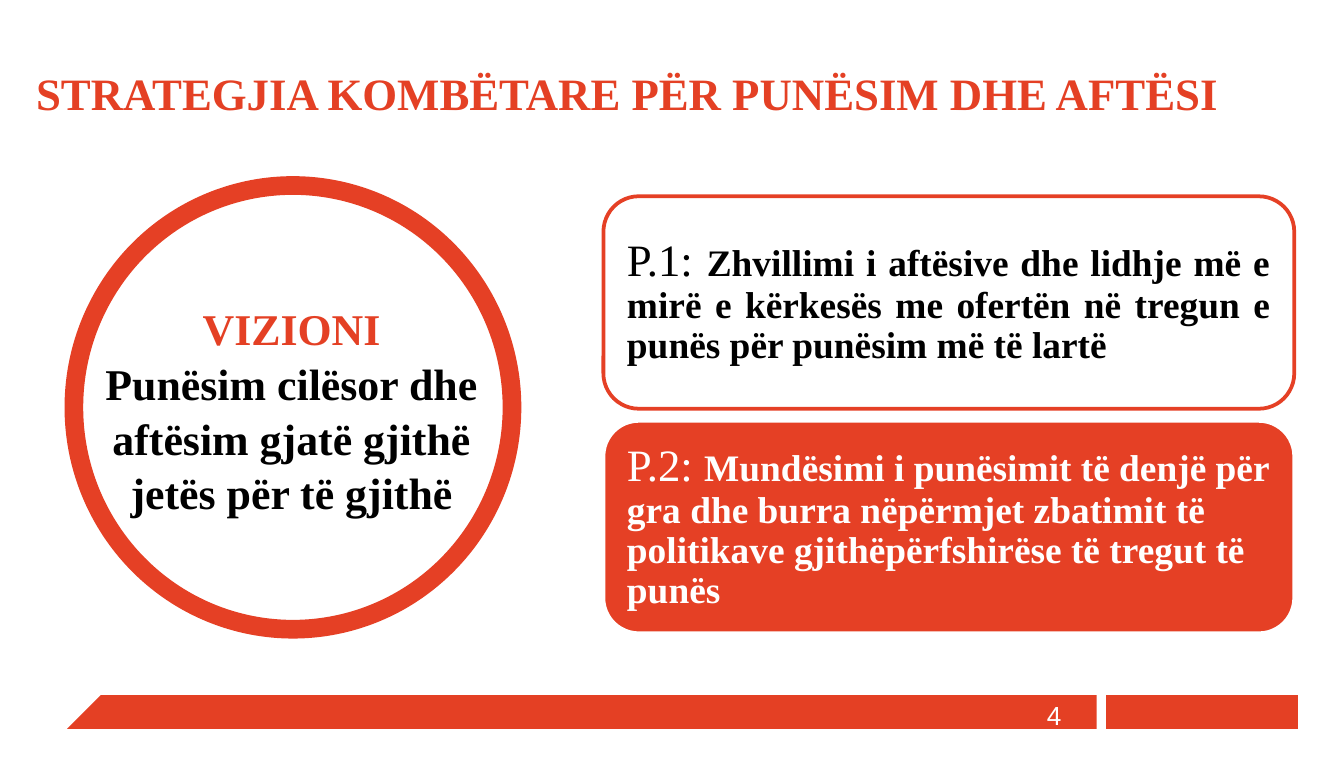
from pptx import Presentation
from pptx.dml.color import RGBColor
from pptx.enum.shapes import MSO_SHAPE
from pptx.enum.text import MSO_ANCHOR, PP_ALIGN
from pptx.util import Inches, Pt

RED = RGBColor(0xE4, 0x40, 0x24)
EDGE = RGBColor(0xE5, 0x40, 0x25)
WHITE = RGBColor(255, 255, 255)
BLACK = RGBColor(0, 0, 0)


class Deck:
    """Holds the style and the current slide, and draws each kind of element."""

    serif = "Times New Roman"

    def __init__(self, slide):
        self.shapes = slide.shapes

    def style(self, font, size, color, bold=None, name=serif):
        font.name = name
        font.size = Pt(size)
        font.color.rgb = color
        font.bold = bold

    def frame(self, shape, pad, anchor):
        frame = shape.text_frame
        frame.word_wrap = True
        frame.vertical_anchor = anchor
        frame.margin_left = frame.margin_right = Inches(pad)
        frame.margin_top = frame.margin_bottom = Inches(pad)
        return frame

    def text(self, box, lines, size, bold=None, align=PP_ALIGN.LEFT, pad=0,
             anchor=MSO_ANCHOR.TOP, space=None, name=serif):
        shape = self.shapes.add_textbox(*map(Inches, box))
        frame = self.frame(shape, pad, anchor)
        for i, (words, color) in enumerate(lines):
            para = frame.add_paragraph() if i else frame.paragraphs[0]
            para.text = words
            para.alignment = align
            para.line_spacing = space
            self.style(para.font, size, color, bold, name)

    def bar(self, points):
        start, *rest = [(Inches(x), Inches(y)) for x, y in points]
        build = self.shapes.build_freeform(*start)
        build.add_line_segments(rest, close=True)
        shape = build.convert_to_shape()
        shape.shadow.inherit = False
        shape.fill.solid()
        shape.fill.fore_color.rgb = RED
        shape.line.fill.background()

    def shape(self, kind, box, edge, width, fill=None):
        shape = self.shapes.add_shape(kind, *map(Inches, box))
        shape.shadow.inherit = False
        if fill is None:
            shape.fill.background()
        else:
            shape.fill.solid()
            shape.fill.fore_color.rgb = fill
        shape.line.color.rgb = edge
        shape.line.width = Pt(width)
        return shape

    def card(self, top, fill, edge, color, label, words, align):
        box = (4.49, top, 5.14, 1.58)
        shape = self.shape(MSO_SHAPE.ROUNDED_RECTANGLE, box, edge, 2, fill)
        para = self.frame(shape, 0.1, MSO_ANCHOR.MIDDLE).paragraphs[0]
        para.alignment = align
        para.line_spacing = 0.9
        for part, size, bold in ((label, 24, False), (words, 20, True)):
            run = para.add_run()
            run.text = part
            self.style(run.font, size, color, bold)


def main():
    prs = Presentation()
    prs.slide_width = Inches(10)
    prs.slide_height = Inches(5.63)
    deck = Deck(prs.slides.add_slide(prs.slide_layouts[6]))

    top, base = 5.17, 5.42
    deck.bar([(8.16, top), (0.75, top), (0.5, base), (8.16, base)])
    deck.bar([(9.66, top), (8.23, top), (8.23, base), (9.66, base)])

    deck.text((0.61, 2.23, 3.12, 2.38),
              [("VIZIONI", RED),
               ("Punësim cilësor dhe aftësim gjatë gjithë jetës për të gjithë", BLACK)],
              23.5, True, PP_ALIGN.CENTER, space=1.04)
    deck.card(3.13, EDGE, WHITE, WHITE, "P.2: ",
              "Mundësimi i punësimit të denjë për gra dhe burra nëpërmjet "
              "zbatimit të politikave gjithëpërfshirëse të tregut të punës",
              PP_ALIGN.LEFT)
    deck.card(1.46, WHITE, EDGE, BLACK, "P.1: ",
              "Zhvillimi i aftësive dhe lidhje më e mirë e kërkesës me ofertën "
              "në tregun e punës për punësim më të lartë", PP_ALIGN.JUSTIFY)
    deck.text((7.79, 5.2, 0.86, 0.24), [("4", WHITE)], 14, name="Arial")
    deck.shape(MSO_SHAPE.OVAL, (0.55, 1.38, 3.26, 3.3), EDGE, 10)
    deck.text((0.17, 0.37, 9.32, 0.63),
              [("STRATEGJIA KOMBËTARE PËR PUNËSIM DHE AFTËSI", RED)],
              24, True, pad=0.1, anchor=MSO_ANCHOR.MIDDLE)
    prs.save("out.pptx")


if __name__ == "__main__":
    main()
